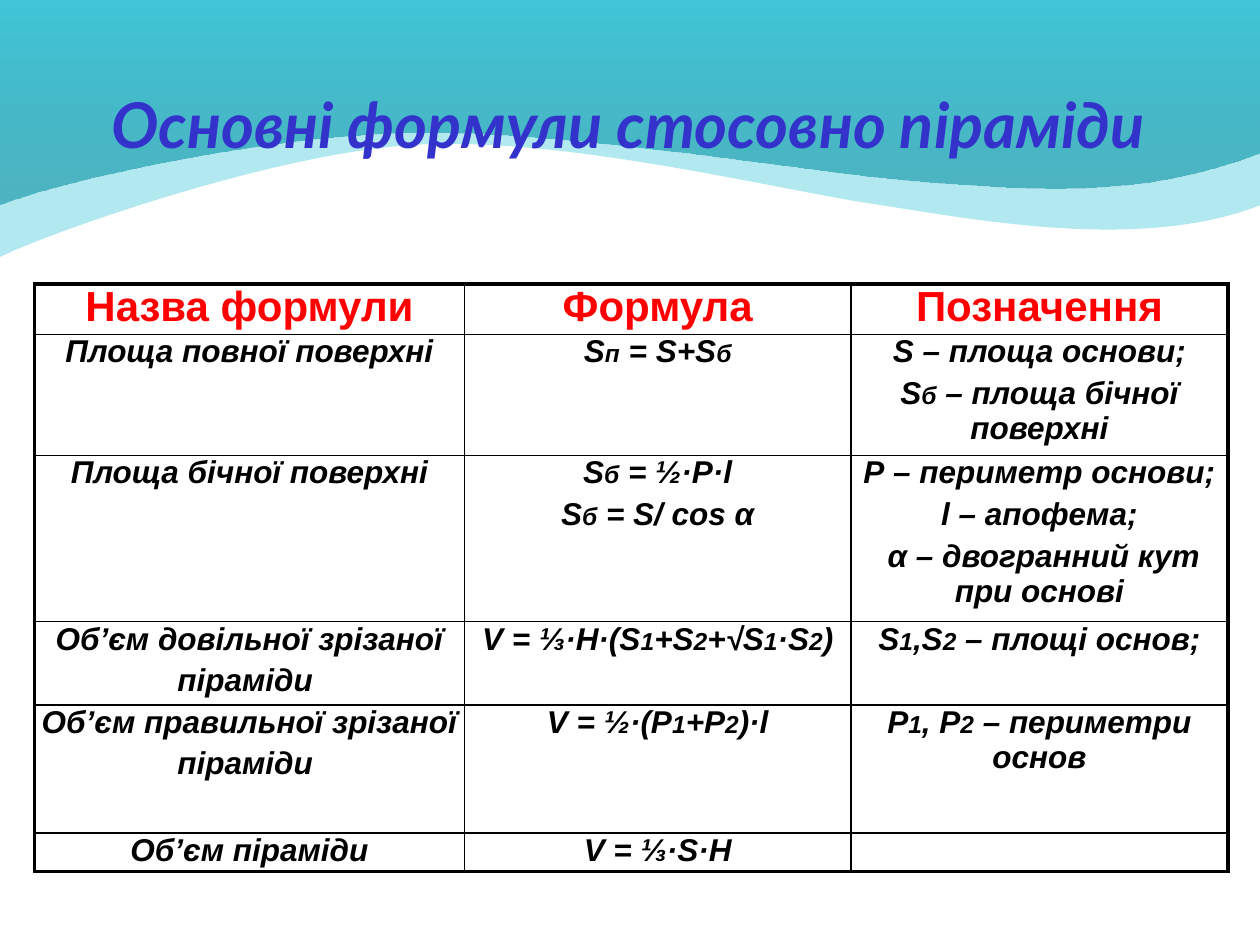
import lxml.etree
import pptx
import pptx.dml.color
import pptx.enum.text
import pptx.oxml.ns
import pptx.util

WIDTH = pptx.util.Inches(10)
HEIGHT = pptx.util.Inches(7.5)
COLORS = {
    "aqua": "40C6D8",
    "teal": "249EAE",
    "title": "3333CC",
    "header": "FF0000",
    "ink": "000000",
}
COLUMN_PERCENTS = [34.1, 30.7, 29.9]
ROW_INCHES = [0.4, 0.96, 1.32, 0.66, 1.02, 0.3]
LOW_WAVE = [
    (0, 0.54), (0, 1.5), (0, 2.04),
    (0.33, 1.87), (2.14, 1.22), (3.28, 1.15),
    (4.43, 1.08), (6.06, 1.48), (6.87, 1.61),
    (7.68, 1.73), (9.02, 2.01), (10, 1.63),
]
HIGH_WAVE = [
    (0, 0.54), (0, 1.08), (0, 1.62),
    (0.45, 1.44), (2.03, 1.08), (3.26, 1.05),
    (4.49, 1.02), (6.58, 1.39), (7.37, 1.44),
    (8.16, 1.49), (9.02, 1.59), (10, 1.21),
]
FORMULAS = [
    [["Назва формули"], ["Формула"], ["Позначення"]],
    [["Площа повної поверхні"], ["S|п| = S+S|б"],
     ["S – площа основи;", "S|б| – площа бічної поверхні"]],
    [["Площа бічної поверхні"], ["S|б| = ½·P·l", "S|б| = S/ cos α"],
     ["Р – периметр основи;", "l – апофема;", " α – двогранний кут при основі"]],
    [["Об’єм довільної зрізаної", "піраміди "],
     ["V = ⅓·H·(S|1|+S|2|+√S|1|·S|2|)"], ["S|1|,S|2| – площі основ;"]],
    [["Об’єм правильної зрізаної", "піраміди "],
     ["V = ½·(P|1|+P|2|)·l"], ["P|1|, P|2| – периметри основ"]],
    [["Об’єм піраміди"], ["V = ⅓·S·H"], []],
]


def across(percent):
    return int(WIDTH * percent / 100)


def down(percent):
    return int(HEIGHT * percent / 100)


def rgb(name):
    return pptx.dml.color.RGBColor.from_string(COLORS[name])


def add_xml(parent, tag, **attributes):
    return lxml.etree.SubElement(parent, pptx.oxml.ns.qn(tag), attributes)


def bend_segments(wave, count):
    segments = wave._element.xpath(".//a:lnTo")[:count]
    for first in range(0, count, 3):
        curve = lxml.etree.Element(pptx.oxml.ns.qn("a:cubicBezTo"))
        segments[first].addprevious(curve)
        for segment in segments[first:first + 3]:
            curve.append(segment[0])
            segment.getparent().remove(segment)


def add_wave(slide, curve_points):
    outline = curve_points + [(10.01, 0), (0, 0)]
    builder = slide.shapes.build_freeform(0, 0)
    builder.add_line_segments(
        [(pptx.util.Inches(x), pptx.util.Inches(y)) for x, y in outline], close=True
    )
    wave = builder.convert_to_shape()
    bend_segments(wave, len(curve_points))
    wave.shadow.inherit = False
    wave.line.fill.background()
    return wave


def set_opacity(wave, percent):
    color = wave._element.spPr.xpath(".//a:srgbClr")[0]
    add_xml(color, "a:alpha", val=str(percent * 1000))


def add_waves(slide):
    low = add_wave(slide, LOW_WAVE)
    low.fill.solid()
    low.fill.fore_color.rgb = rgb("aqua")
    set_opacity(low, 40)
    high = add_wave(slide, HIGH_WAVE)
    high.fill.gradient()
    high.fill.gradient_angle = 90
    for stop, name in zip(high.fill.gradient_stops, ("teal", "aqua")):
        stop.color.rgb = rgb(name)
    set_opacity(high, 69)


def add_run(paragraph, text, size, color, font="Arial", italic=True):
    run = paragraph.add_run()
    run.text = text
    run.font.name = font
    run.font.size = pptx.util.Pt(size)
    run.font.bold = True
    run.font.italic = italic
    run.font.color.rgb = rgb(color)


def place_title(slide, text):
    title = slide.shapes.title
    slide.shapes._spTree.append(title._element)
    title.left, title.top = across(3.3), down(3.4)
    title.width, title.height = across(93.1), down(19.33)
    title.text_frame.vertical_anchor = pptx.enum.text.MSO_ANCHOR.MIDDLE
    paragraph = title.text_frame.paragraphs[0]
    paragraph.alignment = pptx.enum.text.PP_ALIGN.CENTER
    add_run(paragraph, text, 36, "title", "Lato")


def set_borders(cell, outer_sides):
    properties = cell._tc.get_or_add_tcPr()
    for side in "LRTB":
        width = pptx.util.Pt(2.25 if side in outer_sides else 1)
        border = add_xml(properties, f"a:ln{side}", w=str(width))
        add_xml(add_xml(border, "a:solidFill"), "a:srgbClr", val=COLORS["ink"])


def fill_cell(cell, lines, is_header):
    cell.margin_left = cell.margin_right = cell.margin_top = cell.margin_bottom = 0
    frame = cell.text_frame
    for i, line in enumerate(lines):
        paragraph = frame.add_paragraph() if i else frame.paragraphs[0]
        paragraph.alignment = pptx.enum.text.PP_ALIGN.CENTER
        spacing = add_xml(paragraph._p.get_or_add_pPr(), "a:spcBef")
        add_xml(spacing, "a:spcPct", val="20000")
        for j, part in enumerate(line.split("|")):
            if is_header:
                add_run(paragraph, part, 24, "header", italic=False)
            else:
                add_run(paragraph, part, 14 if j % 2 else 18, "ink")


def add_formula_table(slide):
    row_count, column_count = len(FORMULAS), len(COLUMN_PERCENTS)
    table = slide.shapes.add_table(
        row_count, column_count, across(2.75), down(30.05),
        across(sum(COLUMN_PERCENTS)), pptx.util.Inches(sum(ROW_INCHES)),
    ).table
    table.first_row = table.horz_banding = False
    for column, percent in zip(table.columns, COLUMN_PERCENTS):
        column.width = across(percent)
    for r, (height, row) in enumerate(zip(ROW_INCHES, FORMULAS)):
        table.rows[r].height = pptx.util.Inches(height)
        for c, lines in enumerate(row):
            cell = table.cell(r, c)
            edges = {"L": c == 0, "R": c == column_count - 1,
                     "T": r == 0, "B": r == row_count - 1}
            set_borders(cell, [side for side in edges if edges[side]])
            cell.fill.background()
            fill_cell(cell, lines, r == 0)


def main():
    presentation = pptx.Presentation()
    presentation.slide_width, presentation.slide_height = WIDTH, HEIGHT
    slide = presentation.slides.add_slide(presentation.slide_layouts[5])
    add_waves(slide)
    place_title(slide, "Основні формули стосовно піраміди")
    add_formula_table(slide)
    presentation.save("out.pptx")


if __name__ == "__main__":
    main()
